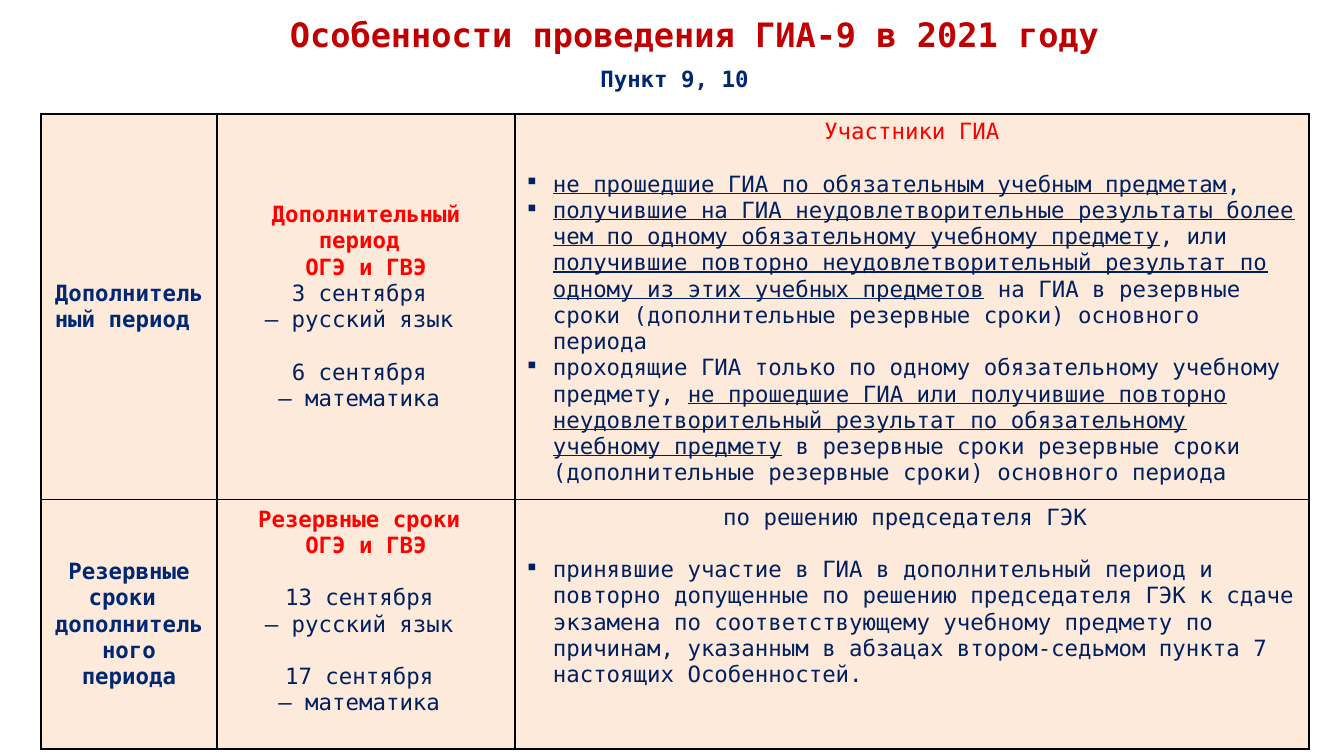
from pptx import Presentation
from pptx.dml.color import RGBColor as RGB
from pptx.enum.text import MSO_ANCHOR as ANCHOR, PP_ALIGN as ALIGN
from pptx.oxml.ns import qn
from pptx.util import Emu, Pt
from lxml.etree import SubElement

PX = 914400 / 134.4
FONT = "DejaVu Sans Mono"
COLORS = {"title": "C00000", "head": "002774", "body": "002060",
          "accent": "FF0000", "cell": "FDEADA", "border": "000000"}

# Text styles
TITLE = {"size": 18, "bold": True, "color": "title"}
HEAD = {"size": 12, "bold": True, "color": "head"}
ACCENT = {"size": 12, "bold": True, "color": "accent"}
NOTE = {"size": 12, "bold": False, "color": "accent"}
BODY = {"size": 12, "bold": False, "color": "body"}
UNDER = {**BODY, "underline": True}

# Paragraph kinds: centred, centred after a gap, bulleted, bulleted after a gap
CENTER, CENTER_GAP, BULLET, BULLET_GAP = "c", "c+", "b", "b+"
LINE_GAP = 14  # points, one line of body text

# Content: a paragraph is (kind, [(text, style), ...])
HEADINGS = [
    ((27, 9, 1302, 55), "Особенности проведения ГИА-9 в 2021 году", TITLE, 33, 0.9),
    ((71, 59, 1207, 40), "Пункт 9, 10", HEAD, 0, 1.0),
]
EXTRA_PERIOD = [
    [(CENTER, [("Дополнительный период ", HEAD)])],
    [(CENTER, [("Дополнительный период ", ACCENT)]),
     (CENTER, [("ОГЭ и ГВЭ", ACCENT)]),
     (CENTER, [("3 сентября ", BODY)]),
     (CENTER, [("– русский язык ", BODY)]),
     (CENTER_GAP, [("6 сентября ", BODY)]),
     (CENTER, [("– математика ", BODY)])],
    [(CENTER, [("Участники ГИА", NOTE)]),
     (BULLET_GAP, [("не прошедшие ГИА по обязательным учебным предметам", UNDER),
                   (",", BODY)]),
     (BULLET, [("получившие на ГИА неудовлетворительные результаты более чем "
                "по одному обязательному учебному предмету", UNDER),
               (", или ", BODY),
               ("получившие повторно неудовлетворительный результат по одному "
                "из этих учебных предметов", UNDER),
               (" на ГИА в резервные сроки (дополнительные резервные сроки) "
                "основного периода", BODY)]),
     (BULLET, [("проходящие ГИА только по одному обязательному учебному "
                "предмету, ", BODY),
               ("не прошедшие ГИА или получившие повторно неудовлетворительный "
                "результат по обязательному учебному предмету", UNDER),
               (" в резервные сроки резервные сроки (дополнительные резервные "
                "сроки) основного периода", BODY)])],
]
RESERVE_DATES = [
    [(CENTER, [("Резервные сроки ", HEAD)]),
     (CENTER, [("дополнительного периода", HEAD)])],
    [(CENTER, [("Резервные сроки ", ACCENT)]),
     (CENTER, [("ОГЭ и ГВЭ", ACCENT)]),
     (CENTER_GAP, [("13 сентября ", BODY)]),
     (CENTER, [("– русский язык ", BODY)]),
     (CENTER_GAP, [("17 сентября ", BODY)]),
     (CENTER, [("– математика ", BODY)])],
    [(CENTER, [("по решению председателя ГЭК ", BODY)]),
     (BULLET_GAP, [("принявшие участие в ГИА в дополнительный период и повторно "
                    "допущенные по решению председателя ГЭК к сдаче экзамена по "
                    "соответствующему учебному предмету по причинам, указанным "
                    "в абзацах втором-седьмом пункта 7 настоящих Особенностей.",
                    BODY)])],
]
ROWS = [EXTRA_PERIOD, RESERVE_DATES]

# Table geometry in px
LEFT, TOP = 41, 114
COL_WIDTHS = [176, 298, 794]
ROW_HEIGHTS = [378, 247]
MARGINS = {"margin_left": 12, "margin_right": 12, "margin_top": 5, "margin_bottom": 5}
LOW_MARGIN = {(1, 1): 31}  # the reserve dates sit above the middle
INDENT = 26


def px(n):
    return Emu(round(n * PX))


def add_run(p, text, style):
    r = p.add_run()
    r.text = text
    r.font.name = FONT
    for name, value in style.items():
        if name == "color":
            r.font.color.rgb = RGB.from_string(COLORS[value])
        else:
            setattr(r.font, name, Pt(value) if name == "size" else value)


def fill_text(tf, paragraphs):
    for i, (kind, runs) in enumerate(paragraphs):
        p = tf.add_paragraph() if i else tf.paragraphs[0]
        if kind.endswith("+"):
            p.space_before = Pt(LINE_GAP)
        if kind.startswith("c"):
            p.alignment = ALIGN.CENTER
        else:
            pPr = p._p.get_or_add_pPr()
            pPr.set("marL", str(px(INDENT)))
            pPr.set("indent", str(-px(INDENT)))
            SubElement(pPr, qn("a:buFont"), typeface="Wingdings")
            SubElement(pPr, qn("a:buChar"), char="§")
        for text, style in runs:
            add_run(p, text, style)


def add_borders(cell):
    tcPr = cell._tc.get_or_add_tcPr()
    for side in ("lnL", "lnR", "lnT", "lnB"):
        ln = SubElement(tcPr, qn(f"a:{side}"), w=str(Pt(1)))
        fill = SubElement(ln, qn("a:solidFill"))
        SubElement(fill, qn("a:srgbClr"), val=COLORS["border"])


prs = Presentation()
prs.slide_width, prs.slide_height = px(1344), px(756)
s = prs.slides.add_slide(prs.slide_layouts[6])

# Title and subtitle
for box, text, style, indent, spacing in HEADINGS:
    tf = s.shapes.add_textbox(*map(px, box)).text_frame
    tf.word_wrap = True
    tf.vertical_anchor = ANCHOR.MIDDLE
    fill_text(tf, [(CENTER, [(text, style)])])
    p = tf.paragraphs[0]
    p.line_spacing = spacing
    p._p.get_or_add_pPr().set("marL", str(px(indent)))

# Table of periods
frame = s.shapes.add_table(len(ROWS), len(COL_WIDTHS), px(LEFT), px(TOP),
                           px(sum(COL_WIDTHS)), px(sum(ROW_HEIGHTS)))
table = frame.table
table.first_row = table.horz_banding = False
for column, width in zip(table.columns, COL_WIDTHS):
    column.width = px(width)
for row, height in zip(table.rows, ROW_HEIGHTS):
    row.height = px(height)

for i, row in enumerate(ROWS):
    for j, paragraphs in enumerate(row):
        cell = table.cell(i, j)
        margins = {**MARGINS, "margin_bottom": LOW_MARGIN.get((i, j), 5)}
        for name, value in margins.items():
            setattr(cell, name, px(value))
        cell.vertical_anchor = ANCHOR.TOP if j == 2 else ANCHOR.MIDDLE
        add_borders(cell)
        cell.fill.solid()
        cell.fill.fore_color.rgb = RGB.from_string(COLORS["cell"])
        fill_text(cell.text_frame, paragraphs)

prs.save("out.pptx")
